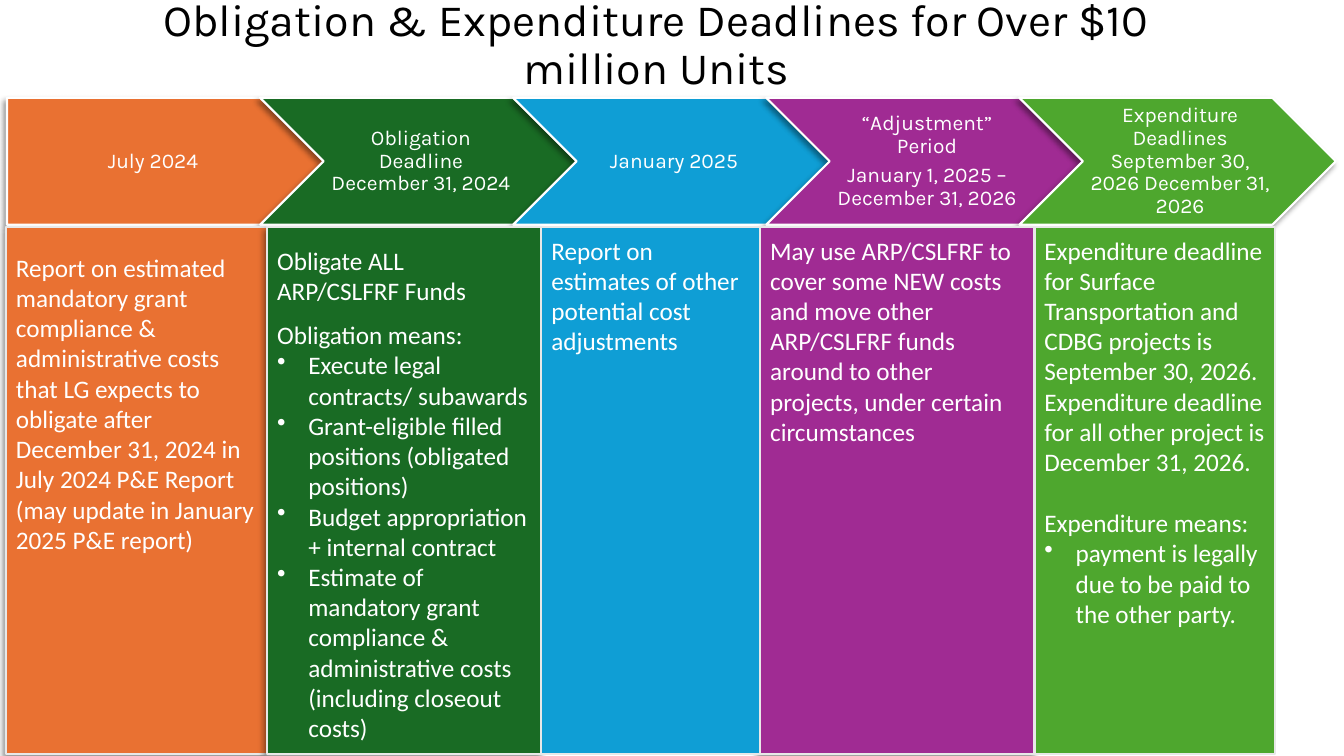
from dataclasses import dataclass
from itertools import accumulate

from lxml import etree
from pptx import Presentation
from pptx.dml.color import RGBColor
from pptx.enum import shapes, text
from pptx.oxml import ns
from pptx.util import Inches, Pt


@dataclass(frozen=True)
class Theme:
    ink: str = "000000"
    white: str = "FFFFFF"
    edge: str = "E8E8E8"
    orange: str = "E97132"
    dark: str = "196B24"
    blue: str = "0F9ED5"
    purple: str = "A02B93"
    green: str = "4EA72E"
    head_font: str = "Karla"
    body_font: str = "Calibri"
    title: int = 32
    head: int = 15
    body: int = 18


@dataclass(frozen=True)
class Line:
    words: str
    bullet: bool = False
    gap: int = 0  # points above


@dataclass(frozen=True)
class Stage:
    fill: str
    heads: list[str]
    width: float
    top: float  # inset above the body text
    lines: list[Line]
    shadow: bool = True


T = Theme()
LEFT, HEAD_Y, BODY_Y = 0.06, 0.97, 2.25
HEAD_X, HEAD_W, HEAD_H, STEP = 0.07, 3.14, 1.26, 2.51
BODY_H, INDENT = 5.23, 0.31

STAGES = [
    Stage(T.orange, ["July 2024"], 2.59, 0.25, [
        Line("Report on estimated mandatory grant compliance & administrative "
             "costs that LG expects to obligate after December 31, 2024 in "
             "July 2024 P&E Report (may update in January 2025 P&E report)")]),
    Stage(T.dark, ["Obligation Deadline December 31, 2024"], 2.72, 0.18, [
        Line("Obligate ALL ARP/CSLFRF Funds"),
        Line("Obligation means:", gap=10),
        Line("Execute legal contracts/ subawards", True),
        Line("Grant-eligible filled positions (obligated positions)", True),
        Line("Budget appropriation + internal contract", True),
        Line("Estimate of mandatory grant compliance & administrative costs "
             "(including closeout costs)", True)]),
    Stage(T.blue, ["January 2025"], 2.17, 0.08, [
        Line("Report on estimates of other potential cost adjustments")], False),
    Stage(T.purple, ["“Adjustment” Period", "January 1, 2025 – December 31, 2026"],
          2.72, 0.08, [
        Line("May use ARP/CSLFRF to cover some NEW costs and move other "
             "ARP/CSLFRF funds around to other projects, under certain "
             "circumstances")]),
    Stage(T.green, ["Expenditure Deadlines September 30, 2026 December 31, 2026"],
          2.39, 0.08, [
        Line("Expenditure deadline for Surface Transportation and CDBG projects "
             "is September 30, 2026. Expenditure deadline for all other project "
             "is December 31, 2026."),
        Line("Expenditure means:", gap=22),
        Line("payment is legally due to be paid to the other party.", True)], False),
]


def style(font, name: str, size: int, color: str) -> None:
    font.name, font.size = name, Pt(size)
    font.color.rgb = RGBColor.from_string(color)


def cast(shape) -> None:
    """Add a soft shadow to the lower left."""
    fx = shape._element.spPr.find(ns.qn("a:effectLst"))
    drop = etree.SubElement(fx, ns.qn("a:outerShdw"), blurRad=str(Pt(4)),
                            dist=str(Pt(3)), dir="8100000", algn="tr",
                            rotWithShape="0")
    tint = etree.SubElement(drop, ns.qn("a:srgbClr"), val=T.ink)
    etree.SubElement(tint, ns.qn("a:alpha"), val="40000")


def block(slide, kind, box: tuple, fill: str, edge: str, shadow: bool):
    shape = slide.shapes.add_shape(kind, *map(Inches, box))
    shape.shadow.inherit = False
    shape.fill.solid()
    shape.fill.fore_color.rgb = RGBColor.from_string(fill)
    shape.line.color.rgb = RGBColor.from_string(edge)
    shape.line.width = Pt(1.5)
    if shadow:
        cast(shape)
    shape.text_frame.word_wrap = True
    return shape


def add_head(slide, rank: int, stage: Stage) -> None:
    kind = shapes.MSO_SHAPE.CHEVRON if rank else shapes.MSO_SHAPE.PENTAGON
    box = (HEAD_X + rank * STEP, HEAD_Y, HEAD_W, HEAD_H)
    frame = block(slide, kind, box, stage.fill, T.white, True).text_frame
    frame.vertical_anchor = text.MSO_ANCHOR.MIDDLE
    frame.margin_left = Inches(0.07 if rank else 0.09)
    frame.margin_right = Inches(0.02)
    frame.margin_top = frame.margin_bottom = Inches(0.04)
    frame.text = "\n".join(stage.heads)
    for para in frame.paragraphs:
        para.alignment = text.PP_ALIGN.CENTER
        para.line_spacing = 0.9
        para.space_after = Pt(5)
        style(para.font, T.head_font, T.head, T.white)


def add_body(slide, left: float, stage: Stage) -> None:
    box = (left, BODY_Y, stage.width, BODY_H)
    frame = block(slide, shapes.MSO_SHAPE.RECTANGLE, box, stage.fill, T.edge,
                  stage.shadow).text_frame
    frame.vertical_anchor = text.MSO_ANCHOR.TOP
    frame.margin_top = Inches(stage.top)
    frame.text = "\n".join(line.words for line in stage.lines)
    for para, line in zip(frame.paragraphs, stage.lines):
        para.alignment = text.PP_ALIGN.LEFT
        para.space_before = Pt(line.gap)
        style(para.font, T.body_font, T.body, T.white)
        if line.bullet:
            props = para._p.get_or_add_pPr()
            props.set("marL", str(Inches(INDENT)))
            props.set("indent", str(-Inches(INDENT)))
            mark = etree.Element(ns.qn("a:buChar"), char="•")
            props.find(ns.qn("a:defRPr")).addprevious(mark)


def add_title(slide) -> None:
    title = slide.shapes.title
    title.left, title.top = Inches(0.76), Inches(-0.27)
    title.width, title.height = Inches(11.5), Inches(1.45)
    frame = title.text_frame
    frame.text = "Obligation & Expenditure Deadlines for Over $10 million Units"
    frame.auto_size = text.MSO_AUTO_SIZE.NONE
    frame.vertical_anchor = text.MSO_ANCHOR.MIDDLE
    para = frame.paragraphs[0]
    para.alignment = text.PP_ALIGN.CENTER
    para.line_spacing = 0.9
    style(para.font, T.head_font, T.title, T.ink)


def main() -> None:
    deck = Presentation()
    deck.slide_width, deck.slide_height = Inches(13.33), Inches(7.5)
    slide = deck.slides.add_slide(deck.slide_layouts[5])
    add_title(slide)

    # Arrow band
    for rank, stage in enumerate(STAGES):
        add_head(slide, rank, stage)

    # Columns side by side, those with a shadow at the back
    lefts = accumulate((s.width for s in STAGES), initial=LEFT)
    for left, stage in sorted(zip(lefts, STAGES), key=lambda c: not c[1].shadow):
        add_body(slide, left, stage)

    deck.save("out.pptx")


if __name__ == "__main__":
    main()
